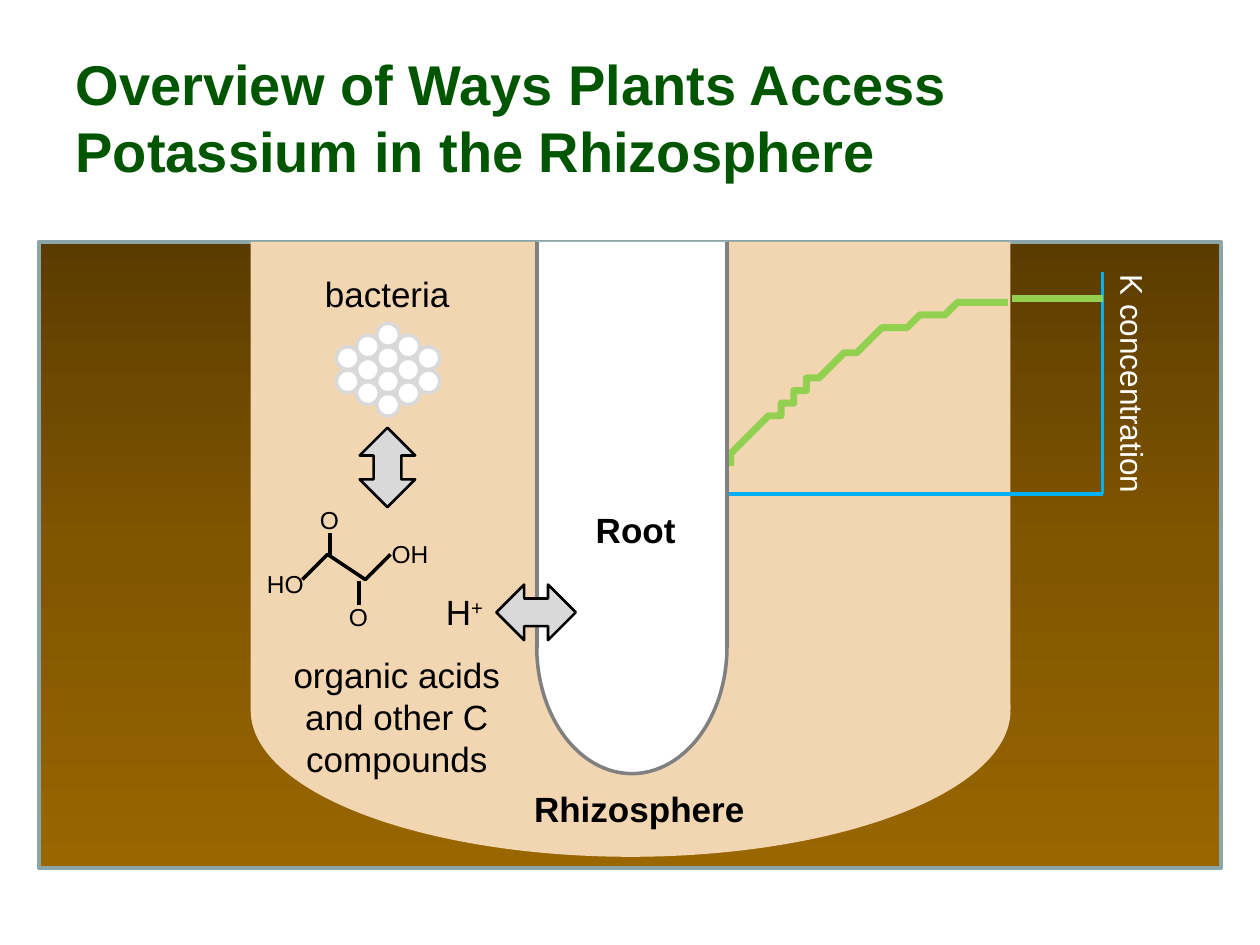
from copy import deepcopy
from dataclasses import dataclass

from pptx import Presentation, util as u
from pptx.dml.color import RGBColor
from pptx.enum import shapes as es, text as et
from pptx.oxml.ns import qn
from lxml import etree

# Lengths are cells of a square grid, 100 columns by 75 rows.
COLS, ROWS = 100, 75
CELL = u.Inches(0.1)
FONT = "Arial"
HEX = {
    "title": "005500", "soil_top": "5B3C00", "soil_mid": "815600",
    "soil_low": "996600", "rim": "8AA6A8", "sand": "F2D6B2",
    "black": "000000", "white": "FFFFFF", "gray": "808080",
    "pale": "D9D9D9", "axis": "00B0F0", "curve": "92D050",
}
KIND = es.MSO_SHAPE
Point = tuple[float, float]


@dataclass
class Box:
    x: float
    y: float
    w: float
    h: float

    def lens(self) -> list[int]:
        return [cells(n) for n in (self.x, self.y, self.w, self.h)]


@dataclass
class Pen:
    color: str
    width: float


@dataclass
class Label:
    text: str
    box: Box
    size: float = 20
    bold: bool = False
    color: str = "black"
    turn: float = 0


def cells(n: float) -> int:
    return round(n * CELL)


def rgb(name: str) -> RGBColor:
    return RGBColor.from_string(HEX[name])


def ink(line, pen: Pen) -> None:
    line.color.rgb = rgb(pen.color)
    line.width = u.Pt(pen.width)


def style(font, size: float, color: str, bold: bool = False) -> None:
    font.name, font.size, font.bold = FONT, u.Pt(size), bold
    font.color.rgb = rgb(color)


def draw(area, kind, box: Box, fill: str, pen: Pen | None = None, turn: float = 0):
    shape = area.add_shape(kind, *box.lens())
    shape.shadow.inherit = False
    shape.rotation = turn
    shape.fill.solid()
    shape.fill.fore_color.rgb = rgb(fill)
    if pen:
        ink(shape.line, pen)
    else:
        shape.line.fill.background()
    return shape


def link(area, start: Point, end: Point, pen: Pen) -> None:
    line = area.add_connector(es.MSO_CONNECTOR.STRAIGHT, *map(cells, start + end))
    ink(line.line, pen)
    etree.SubElement(line._element.spPr, qn("a:effectLst"))


def trace(area, points: list[Point], pen: Pen) -> None:
    """Draw an open, unfilled outline through the points."""
    form = area.build_freeform(*points[0], scale=CELL)
    form.add_line_segments(points[1:], close=False)
    shape = form.convert_to_shape()
    shape.shadow.inherit = False
    shape.fill.background()
    ink(shape.line, pen)


def bend(a: Point, b: Point, c: Point, d: Point, steps: int = 24) -> list[Point]:
    """Sample a cubic curve, leaving out its first point."""
    spots = []
    for i in range(1, steps + 1):
        t = i / steps
        parts = ((1 - t) ** 3, 3 * t * (1 - t) ** 2, 3 * t * t * (1 - t), t ** 3)
        spots.append(tuple(sum(k * p[n] for k, p in zip(parts, (a, b, c, d)))
                           for n in (0, 1)))
    return spots


def write(area, label: Label):
    box = area.add_textbox(*label.box.lens())
    box.rotation = label.turn
    frame = box.text_frame
    frame.text = label.text
    frame.word_wrap = False
    frame.auto_size = et.MSO_AUTO_SIZE.SHAPE_TO_FIT_TEXT
    for run in frame.paragraphs[0].runs:
        style(run.font, label.size, label.color, label.bold)
    return frame.paragraphs[0]


def group(slide):
    return slide.shapes.add_group_shape().shapes


def head(slide) -> None:
    title = slide.shapes.title
    title.left, title.top, title.width, title.height = Box(5, 3, 90, 12.5).lens()
    frame = title.text_frame
    frame.text = "Overview of Ways Plants Access Potassium in the Rhizosphere"
    frame.vertical_anchor = et.MSO_ANCHOR.MIDDLE
    frame.auto_size = et.MSO_AUTO_SIZE.NONE
    frame.paragraphs[0].alignment = et.PP_ALIGN.LEFT
    style(frame.paragraphs[0].runs[0].font, 32, "title", True)


def soil(slide) -> None:
    block = draw(slide.shapes, KIND.RECTANGLE, Box(3.1, 19.2, 93.8, 49.7),
                 "soil_mid", Pen("rim", 2))
    block.fill.gradient()
    block.fill.gradient_angle = 270
    first = block._element.spPr.find(".//" + qn("a:gs"))
    first.addnext(deepcopy(first))
    shades = ("soil_top", "soil_mid", "soil_low")
    for i, (stop, shade) in enumerate(zip(block.fill.gradient_stops, shades)):
        stop.position = i / 2
        stop.color.rgb = rgb(shade)
    zone = group(slide)
    draw(zone, KIND.RECTANGLE, Box(19.9, 19.2, 60.3, 37.1), "sand")
    draw(zone, KIND.OVAL, Box(19.9, 44.8, 60.3, 23.2), "sand")
    write(slide.shapes, Label("Rhizosphere", Box(41.4, 62, 18.9, 4.4), bold=True))


def acid(slide) -> None:
    area = group(slide)
    trace(area, [(24.1, 46), (26.2, 44.2), (28.6, 46.1), (30.8, 44.3)],
          Pen("black", 2))
    for x, y in ((26.2, 42.3), (28.5, 46.1)):
        link(area, (x, y), (x, y + 1.9), Pen("black", 2.25))
    for name, x, y, w in (("HO", 20.2, 44.7, 5), ("OH", 30.1, 42.3, 5),
                          ("O", 26.7, 47.3, 3.5), ("O", 24.4, 39.6, 3.5)):
        write(area, Label(name, Box(x, y, w, 3.4), 14))
    note = write(slide.shapes, Label("organic acids\vand other C\vcompounds",
                                     Box(22.2, 51.4, 18.6, 11.1)))
    note.alignment = et.PP_ALIGN.CENTER


def graph(slide) -> None:
    area = group(slide)
    left, edge, right, base, peak = 57.6, 80.3, 87.5, 39.2, 23.7
    link(area, (right, 21.6), (right, base), Pen("axis", 2.25))
    link(area, (right, base), (left, base), Pen("axis", 2.25))
    write(area, Label("K concentration", Box(80.1, 28.6, 19.6, 4), 18,
                      color="white", turn=90))
    link(area, (right, peak), (edge, peak), Pen("curve", 4))
    start, mid, end = (left, 36.9), (71.4, 25.8), (edge, peak)
    trace(area, [start, *bend(start, (61, 33.1), (66.2, 28), mid),
                 *bend(mid, (76.6, 23.6), end, end)], Pen("curve", 4))


def root(slide) -> None:
    area = group(slide)
    left, wide, top, tall = 42.6, 15.1, 19.2, 32.2
    draw(area, KIND.OVAL, Box(left, 41.3, wide, 20.1), "white", Pen("gray", 2))
    draw(area, KIND.RECTANGLE, Box(left, top, wide, tall), "white")
    for x in (left, left + wide):
        link(area, (x, top + tall), (x, top), Pen("gray", 2.25))
    write(area, Label("Root", Box(46.3, 39.9, 8.4, 4.4), bold=True))


def colony(slide) -> None:
    write(slide.shapes, Label("bacteria", Box(24.8, 21.1, 12, 4.4)))
    area = group(slide)
    for col, count in enumerate((2, 3, 4, 3, 2)):
        for row in range(count):
            y = 28.45 + (row - (count - 1) / 2) * 1.85
            draw(area, KIND.OVAL, Box(26.7 + col * 1.6, y, 1.8, 1.8),
                 "white", Pen("pale", 2))


def swaps(slide) -> None:
    ion = write(slide.shapes, Label("H", Box(34.4, 46.4, 5.1, 4.4)))
    plus = ion.add_run()
    plus.text = "+"
    style(plus.font, 20, "black")
    plus.font._element.set("baseline", "30000")
    for x, y, turn in ((39.4, 46.4, 0), (27.6, 34.9, 90)):
        draw(slide.shapes, KIND.LEFT_RIGHT_ARROW, Box(x, y, 6.3, 4.4),
             "pale", Pen("black", 1.5), turn)


def main() -> None:
    deck = Presentation()
    deck.slide_width, deck.slide_height = cells(COLS), cells(ROWS)
    slide = deck.slides.add_slide(deck.slide_layouts[5])
    for part in (head, soil, acid, graph, root, colony, swaps):
        part(slide)
    deck.save("out.pptx")


if __name__ == "__main__":
    main()
